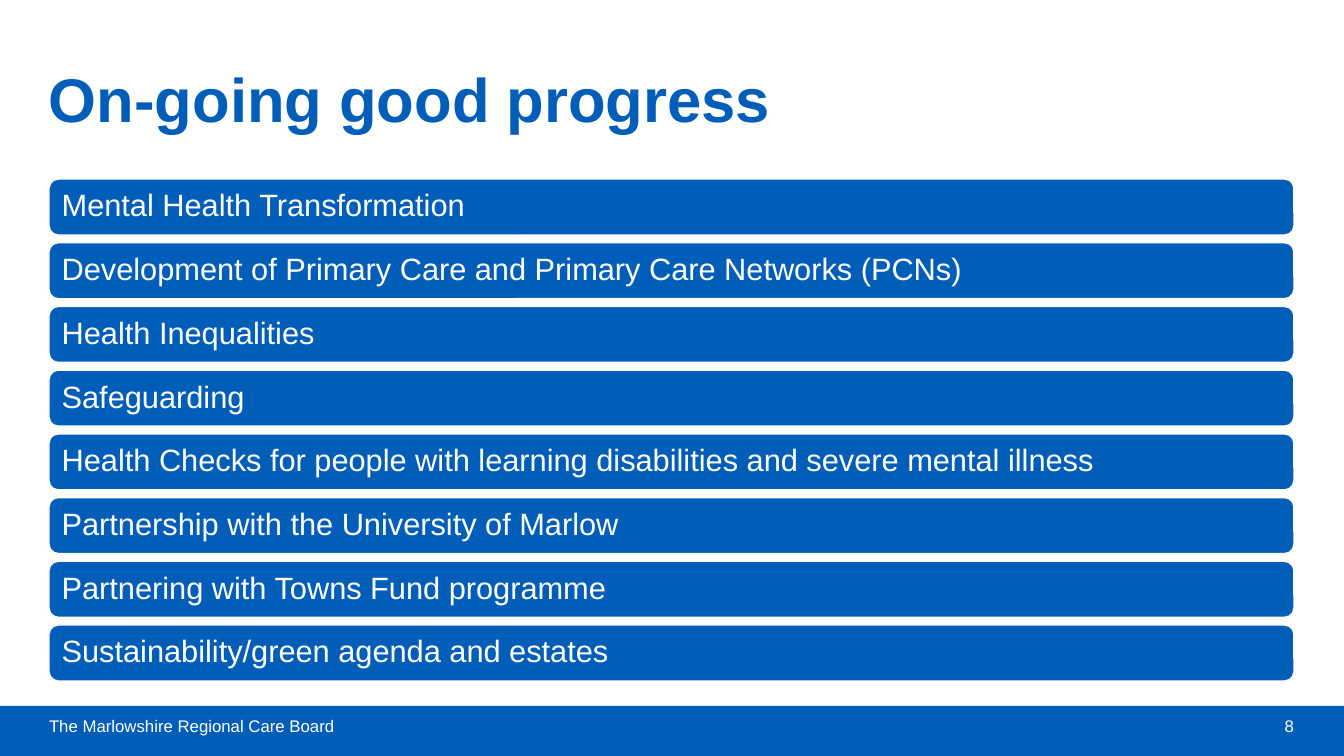
from pptx import Presentation
from pptx.dml.color import RGBColor
from pptx.enum.shapes import MSO_SHAPE
from pptx.enum.text import MSO_ANCHOR, PP_ALIGN
from pptx.util import Pt

RECT, ROUND = MSO_SHAPE.RECTANGLE, MSO_SHAPE.ROUNDED_RECTANGLE
MIDDLE = MSO_ANCHOR.MIDDLE
LEFT, RIGHT = PP_ALIGN.LEFT, PP_ALIGN.RIGHT

TITLE = "On-going good progress"
TOPICS = [
    "Mental Health Transformation",
    "Development of Primary Care and Primary Care Networks (PCNs)",
    "Health Inequalities",
    "Safeguarding",
    "Health Checks for people with learning disabilities and severe mental illness",
    "Partnership with the University of Marlow",
    "Partnering with Towns Fund programme",
    "Sustainability/green agenda and estates",
]
FOOTER = "The Marlowshire Regional Care Board"
NUMBER = "8"

BLUE, WHITE = "005EB8", "FFFFFF"
WIDE, HIGH = 1344, 756
EDGE, SPAN = 49, 1245
FIRST, LAST, BAR = 179, 625, 56
BAND = 706
FOOT = 40
PAGE = 143


def px(n):
    return round(n * 914400 / 100.8)


def color(code):
    return RGBColor.from_string(code)


def write(shape, text, font, align=LEFT, inset=0, spacing=1.0):
    frame = shape.text_frame
    sides = ("margin_left", "margin_right", "margin_top", "margin_bottom")
    layout = dict.fromkeys(sides, px(inset))
    layout.update(word_wrap=True, vertical_anchor=MIDDLE)
    for name, value in layout.items():
        setattr(frame, name, value)
    para = frame.paragraphs[0]
    para.alignment, para.line_spacing = align, spacing
    run = para.add_run()
    run.text = text
    style = {"name": "Arial", "size": Pt(font["size"]), "bold": font.get("bold", False)}
    for name, value in style.items():
        setattr(run.font, name, value)
    run.font.color.rgb = color(font["color"])


def label(slide, box, *args, **extra):
    write(slide.shapes.add_textbox(*map(px, box)), *args, **extra)


def block(slide, kind, box, line=None):
    shape = slide.shapes.add_shape(kind, *map(px, box))
    shape.shadow.inherit = False
    shape.fill.solid()
    shape.fill.fore_color.rgb = color(BLUE)
    if line:
        shape.line.color.rgb = color(line)
        shape.line.width = Pt(1)
    else:
        shape.line.fill.background()
    return shape


def main():
    deck = Presentation()
    deck.slide_width, deck.slide_height = px(WIDE), px(HIGH)
    slide = deck.slides.add_slide(deck.slide_layouts[6])

    block(slide, RECT, (0, BAND, WIDE, HIGH - BAND))
    small = {"size": 12, "color": WHITE}
    label(slide, (EDGE, BAND, 850, FOOT), FOOTER, small)
    label(slide, (EDGE + SPAN - PAGE, BAND, PAGE, FOOT), NUMBER, small, align=RIGHT)

    big = {"size": 44, "color": BLUE, "bold": True}
    label(slide, (EDGE, -1, SPAN, 207), TITLE, big, spacing=0.9)

    step = (LAST - FIRST) / (len(TOPICS) - 1)
    for i, topic in enumerate(TOPICS):
        bar = block(slide, ROUND, (EDGE, FIRST + i * step, SPAN, BAR), line=WHITE)
        write(bar, topic, {"size": 22, "color": WHITE}, inset=10, spacing=0.9)

    deck.save("out.pptx")


if __name__ == "__main__":
    main()
